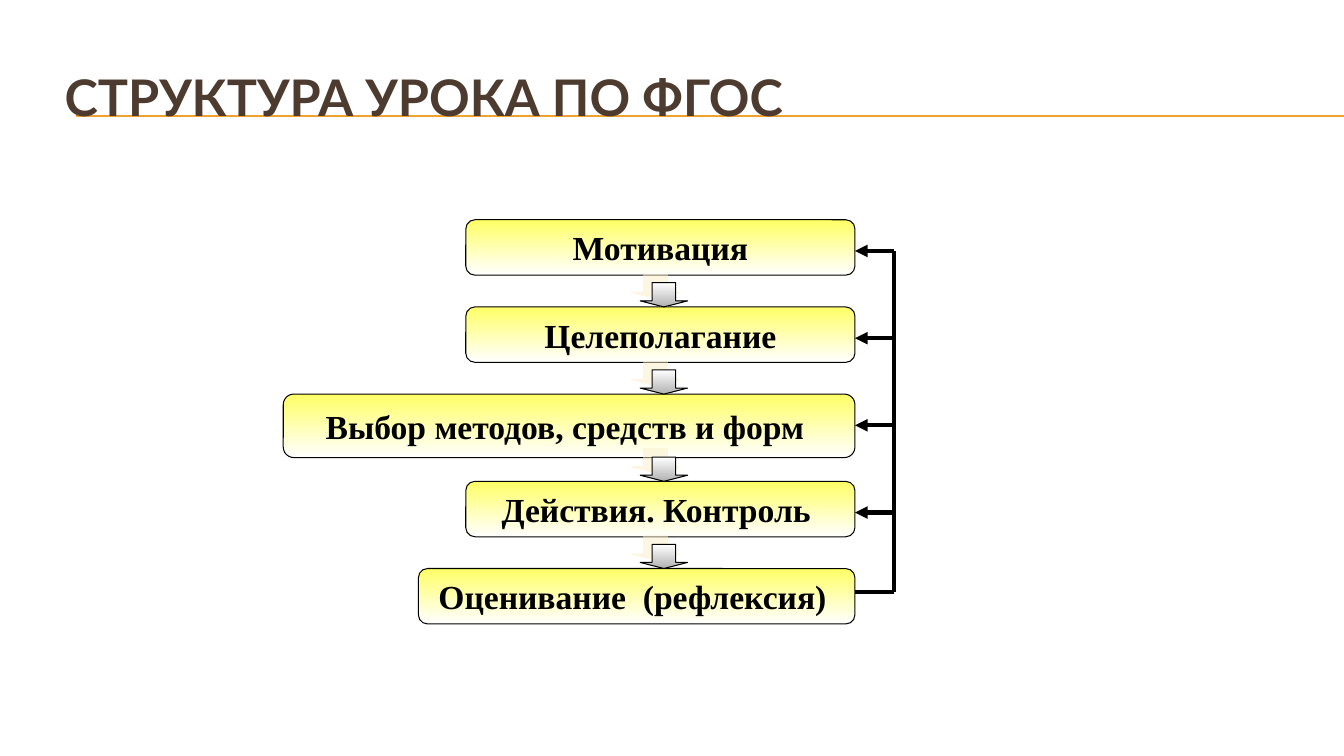
from lxml.etree import SubElement
from pptx import Presentation
from pptx.dml.color import RGBColor
from pptx.enum.shapes import MSO_CONNECTOR, MSO_SHAPE
from pptx.enum.text import MSO_ANCHOR, PP_ALIGN
from pptx.oxml.ns import qn
from pptx.util import Inches, Pt

TITLE = "СТРУКТУРА УРОКА ПО ФГОС"
# Stage name, left edge, height
STAGES = [
    ("Мотивация", 4.62, 0.55),
    ("Целеполагание", 4.62, 0.55),
    ("Выбор методов, средств и форм ", 2.81, 0.63),
    ("Действия. Контроль ", 4.62, 0.55),
    ("Оценивание  (рефлексия) ", 4.15, 0.55),
]
FIRST_TOP, LAST_TOP = 2.18, 5.64
STAGES_RIGHT = 8.48
FEEDBACK_X = 8.87
FEEDBACK_DROP = 0.31
FEEDBACK_START_Y = 5.87
ARROW_LEFT, ARROW_WIDTH, ARROW_HEIGHT = 6.35, 0.47, 0.24
TITLE_RULES = (1.15, 1.16)
SLIDE_WIDTH, SLIDE_HEIGHT = 13.33, 7.5

BLACK, WHITE = "000000", "FFFFFF"
YELLOW, GREY = "FFFF66", "B2B2B2"
BROWN, ORANGE, CREAM = "4E3B30", "F0A22E", "FBEEC9"


def paint(color, value):
    color.rgb = RGBColor.from_string(value)


def style_text(frame, text, font_name, size, color):
    frame.vertical_anchor = MSO_ANCHOR.MIDDLE
    paragraph = frame.paragraphs[0]
    paragraph.text = text
    font = paragraph.font
    font.name, font.size, font.bold = font_name, Pt(size), True
    paint(font.color, color)
    return paragraph


def add_gradient_shape(slide, kind, box, top_color, bottom_color):
    """Add an outlined shape shaded from top to bottom, without a shadow."""
    shape = slide.shapes.add_shape(kind, *map(Inches, box))
    shape.fill.gradient()
    shape.fill.gradient_angle = 270
    for stop, color in zip(shape.fill.gradient_stops, (top_color, bottom_color)):
        paint(stop.color, color)
    shape.line.width = Pt(0.75)
    paint(shape.line.color, BLACK)
    shape.shadow.inherit = False
    return shape


def add_stage(slide, name, left, top, height):
    box = (left, top, STAGES_RIGHT - left, height)
    stage = add_gradient_shape(slide, MSO_SHAPE.ROUNDED_RECTANGLE, box, YELLOW, WHITE)
    stage.text_frame.word_wrap = False
    label = style_text(stage.text_frame, name, "Times New Roman", 24, BLACK)
    label.alignment = PP_ALIGN.CENTER


def add_down_arrow(slide, bottom):
    box = (ARROW_LEFT, bottom - ARROW_HEIGHT, ARROW_WIDTH, ARROW_HEIGHT)
    arrow = add_gradient_shape(slide, MSO_SHAPE.DOWN_ARROW, box, WHITE, GREY)
    arrow.adjustments[0], arrow.adjustments[1] = 0.5, 0.25
    effects = arrow.element.spPr.find(qn("a:effectLst"))
    shadow = SubElement(effects, qn("a:outerShdw"), blurRad="0",
                        dist=str(Pt(8.5)), dir=str(225 * 60000),
                        algn="ctr", rotWithShape="0")
    tint = SubElement(shadow, qn("a:srgbClr"), val=CREAM)
    SubElement(tint, qn("a:alpha"), val="50000")


def add_line(slide, start, end, color, width, arrowhead=False):
    line = slide.shapes.add_connector(
        MSO_CONNECTOR.STRAIGHT, *map(Inches, (*start, *end)))
    line.line.width = Pt(width)
    paint(line.line.color, color)
    if arrowhead:
        SubElement(line.line._get_or_add_ln(), qn("a:tailEnd"), type="triangle")
    SubElement(line.element.spPr, qn("a:effectLst"))


def main():
    presentation = Presentation()
    presentation.slide_width = Inches(SLIDE_WIDTH)
    presentation.slide_height = Inches(SLIDE_HEIGHT)
    slide = presentation.slides.add_slide(presentation.slide_layouts[6])

    for y in TITLE_RULES:
        add_line(slide, (0.75, y), (SLIDE_WIDTH, y), ORANGE, 0.75)
    title = slide.shapes.add_textbox(*map(Inches, (0.44, 0.5, 12.66, 0.92)))
    title.text_frame.word_wrap = True
    title.text_frame.margin_left = Inches(0.2)
    style_text(title.text_frame, TITLE, "Lato", 36, BROWN)

    step = (LAST_TOP - FIRST_TOP) / (len(STAGES) - 1)
    tops = [FIRST_TOP + step * i for i in range(len(STAGES))]
    for (name, left, height), top in zip(STAGES, tops):
        add_stage(slide, name, left, top, height)
    for top in tops[1:]:
        add_down_arrow(slide, top)

    # Feedback runs from the last stage back to every earlier one
    corner = (FEEDBACK_X, FEEDBACK_START_Y)
    add_line(slide, (STAGES_RIGHT, FEEDBACK_START_Y), corner, BLACK, 3)
    add_line(slide, corner, (FEEDBACK_X, FIRST_TOP + FEEDBACK_DROP), BLACK, 3)
    for top in tops[:-1]:
        y = top + FEEDBACK_DROP
        add_line(slide, (FEEDBACK_X, y), (STAGES_RIGHT, y), BLACK, 3, arrowhead=True)

    presentation.save("out.pptx")


if __name__ == "__main__":
    main()
